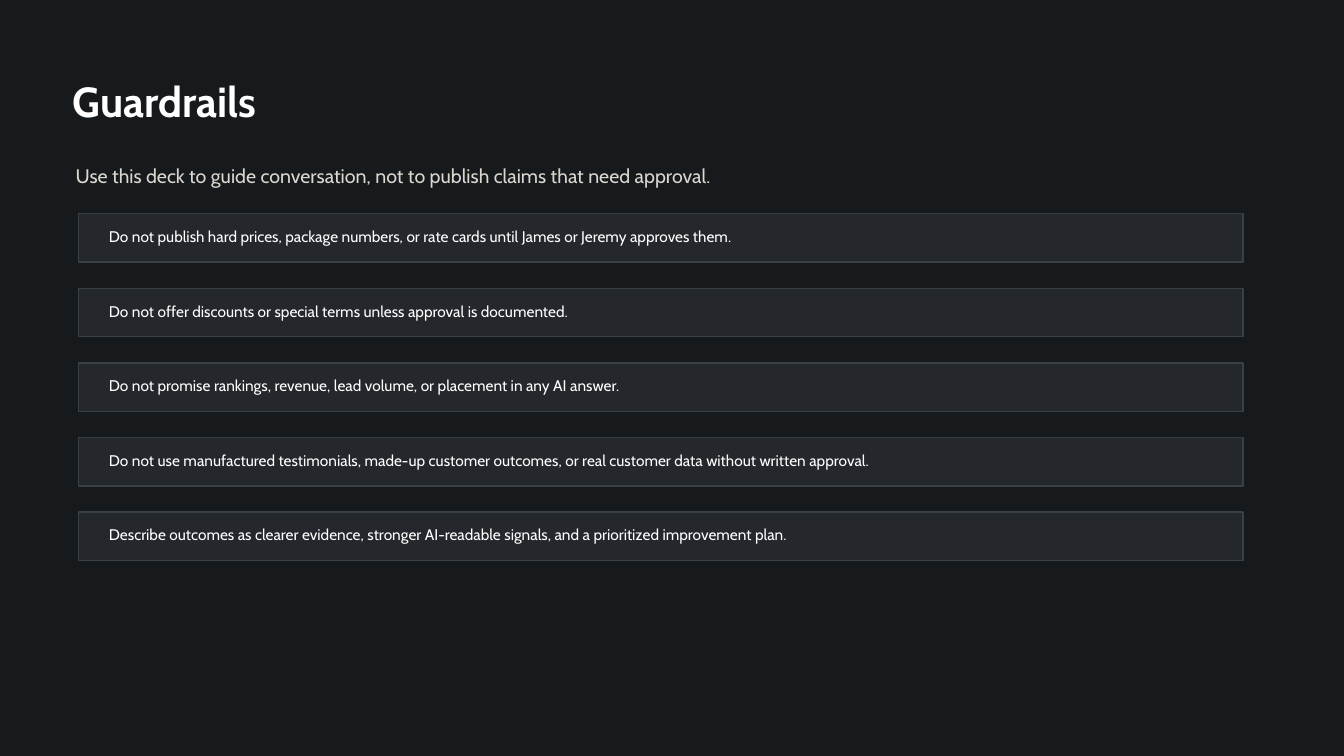
"""Build the Guardrails slide: a title, a lead line and a column of rule bars."""
from dataclasses import dataclass

import pptx
import pptx.dml.color
import pptx.enum.shapes
import pptx.enum.text
import pptx.slide
import pptx.util

BACKGROUND = pptx.dml.color.RGBColor(0x17, 0x1A, 0x1D)
BAR_FILL = pptx.dml.color.RGBColor(0x24, 0x28, 0x2C)
BAR_LINE = pptx.dml.color.RGBColor(0x3B, 0x40, 0x45)
WHITE = pptx.dml.color.RGBColor(0xFF, 0xFF, 0xFF)
SAND = pptx.dml.color.RGBColor(0xDA, 0xD7, 0xCF)

FONT_NAME = "Cabin"
FIRST_BAR_TOP = 2.12
BAR_PITCH = 0.74
RULES = (
    "Do not publish hard prices, package numbers, or rate cards until James or Jeremy approves them.",
    "Do not offer discounts or special terms unless approval is documented.",
    "Do not promise rankings, revenue, lead volume, or placement in any AI answer.",
    "Do not use manufactured testimonials, made-up customer outcomes, or real customer data without written approval.",
    "Describe outcomes as clearer evidence, stronger AI-readable signals, and a prioritized improvement plan.",
)


@dataclass(frozen=True)
class Label:
    text: str
    left: float
    top: float
    width: float
    height: float
    size: float
    color: pptx.dml.color.RGBColor = WHITE
    bold: bool = False


HEADINGS = (
    Label("Guardrails", 0.72, 0.72, 4.8, 0.55, 30, bold=True),
    Label(
        "Use this deck to guide conversation, not to publish claims that need approval.",
        0.75, 1.52, 7.2, 0.45, 14, SAND,
    ),
)


def add_label(page: pptx.slide.Slide, label: Label) -> None:
    edges = (label.left, label.top, label.width, label.height)
    box = page.shapes.add_textbox(*map(pptx.util.Inches, edges))
    frame = box.text_frame
    frame_format = {
        "word_wrap": True,
        "vertical_anchor": pptx.enum.text.MSO_ANCHOR.MIDDLE,
        "margin_left": 0,
        "margin_top": 0,
        "margin_right": 0,
        "margin_bottom": 0,
    }
    for name, value in frame_format.items():
        setattr(frame, name, value)
    span = frame.paragraphs[0].add_run()
    span.text = label.text
    font_format = {
        "name": FONT_NAME,
        "size": pptx.util.Pt(label.size),
        "bold": label.bold,
    }
    for name, value in font_format.items():
        setattr(span.font, name, value)
    span.font.color.rgb = label.color


def add_rule(page: pptx.slide.Slide, text: str, top: float) -> None:
    bar = page.shapes.add_shape(
        pptx.enum.shapes.MSO_SHAPE.RECTANGLE,
        *map(pptx.util.Inches, (0.78, top, 11.55, 0.48)),
    )
    bar.shadow.inherit = False
    bar.fill.solid()
    bar.fill.fore_color.rgb = BAR_FILL
    bar.line.color.rgb = BAR_LINE
    bar.line.width = pptx.util.Pt(1)
    add_label(page, Label(text, 1.08, top + 0.1, 10.9, 0.25, 11))


def main() -> None:
    deck = pptx.Presentation()
    deck.slide_width = pptx.util.Inches(13.33)
    deck.slide_height = pptx.util.Inches(7.5)
    page = deck.slides.add_slide(deck.slide_layouts[6])
    page.background.fill.solid()
    page.background.fill.fore_color.rgb = BACKGROUND
    for heading in HEADINGS:
        add_label(page, heading)
    for index, rule in enumerate(RULES):
        add_rule(page, rule, FIRST_BAR_TOP + index * BAR_PITCH)
    deck.save("out.pptx")


if __name__ == "__main__":
    main()
